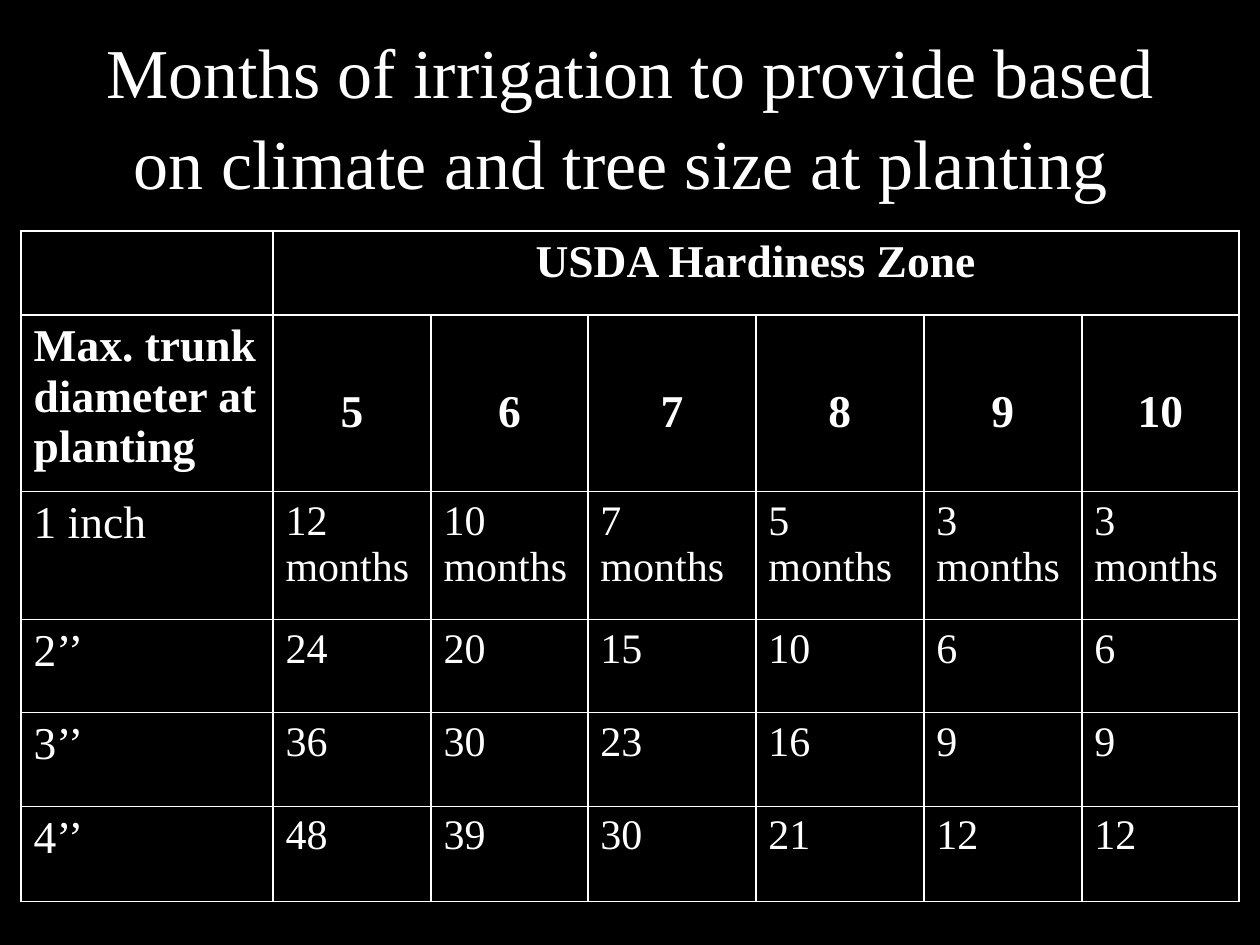
"""Build a slide with a table of irrigation months by climate zone and tree size."""
from lxml.etree import SubElement
from pptx import Presentation
from pptx.dml.color import RGBColor
from pptx.enum.text import MSO_ANCHOR as ANCHOR, PP_ALIGN as ALIGN
from pptx.oxml.ns import qn
from pptx.util import Pt

TITLE = "Months of irrigation to provide based on climate and tree size at planting "
ZONE_HEADING = "USDA Hardiness Zone"
SIZE_HEADING = "Max. trunk diameter at planting"
ZONES = ["5", "6", "7", "8", "9", "10"]
MONTHS = [
    ("1 inch", ["12 months", "10 months", "7 months", "5 months", "3 months", "3 months"]),
    ("2’’", ["24", "20", "15", "10", "6", "6"]),
    ("3’’", ["36", "30", "23", "16", "9", "9"]),
    ("4’’", ["48", "39", "30", "21", "12", "12"]),
]

COLORS = {"back": "000000", "ink": "FFFFFF"}
FONT = "Times New Roman"
COL_WIDTHS = [252, 158, 157, 168, 168, 158, 157]
ROW_HEIGHTS = [84, 164, 128, 93, 94, 95]
EMU_PER_PX = 914400 // 126


def px(n):
    return n * EMU_PER_PX


def rgb(name):
    return RGBColor.from_string(COLORS[name])


def write(tf, text, size, bold=False, align=ALIGN.LEFT):
    p = tf.paragraphs[0]
    p.alignment = align
    r = p.add_run()
    r.text = text
    r.font.name, r.font.size, r.font.bold = FONT, Pt(size), bold
    r.font.color.rgb = rgb("ink")
    return p


def style_cell(cell):
    tc_pr = cell._tc.get_or_add_tcPr()
    for side in ("a:lnL", "a:lnR", "a:lnT", "a:lnB"):
        ln = SubElement(tc_pr, qn(side), w=str(Pt(1)))
        fill = SubElement(ln, qn("a:solidFill"))
        SubElement(fill, qn("a:srgbClr"), val=COLORS["ink"])
    cell.fill.solid()
    cell.fill.fore_color.rgb = rgb("back")


def add_title(s):
    tf = s.shapes.add_textbox(px(63), px(32), px(1134), px(157)).text_frame
    tf.word_wrap = True
    tf.vertical_anchor = ANCHOR.MIDDLE
    tf.margin_top = px(10)
    write(tf, TITLE, 40, align=ALIGN.CENTER).line_spacing = 1.08


def add_months_table(s):
    frame = s.shapes.add_table(len(ROW_HEIGHTS), len(COL_WIDTHS), px(21), px(231),
                               px(sum(COL_WIDTHS)), px(sum(ROW_HEIGHTS)))
    table = frame.table
    table.first_row = table.horz_banding = False
    for col, width in zip(table.columns, COL_WIDTHS):
        col.width = px(width)
    for row, height in zip(table.rows, ROW_HEIGHTS):
        row.height = px(height)
    for cell in table.iter_cells():
        style_cell(cell)

    table.cell(0, 1).merge(table.cell(0, len(ZONES)))
    write(table.cell(0, 1).text_frame, ZONE_HEADING, 26, True, ALIGN.CENTER)
    write(table.cell(1, 0).text_frame, SIZE_HEADING, 26, True)
    for j, zone in enumerate(ZONES, 1):
        cell = table.cell(1, j)
        cell.vertical_anchor = ANCHOR.MIDDLE
        cell.margin_top = px(24)
        write(cell.text_frame, zone, 26, True, ALIGN.CENTER)
    for i, (size, values) in enumerate(MONTHS, 2):
        write(table.cell(i, 0).text_frame, size, 26)
        for j, value in enumerate(values, 1):
            write(table.cell(i, j).text_frame, value, 24)


def main():
    prs = Presentation()
    prs.slide_width, prs.slide_height = px(1260), px(945)
    s = prs.slides.add_slide(prs.slide_layouts[6])
    s.background.fill.solid()
    s.background.fill.fore_color.rgb = rgb("back")
    add_title(s)
    add_months_table(s)
    prs.save("out.pptx")


if __name__ == "__main__":
    main()
